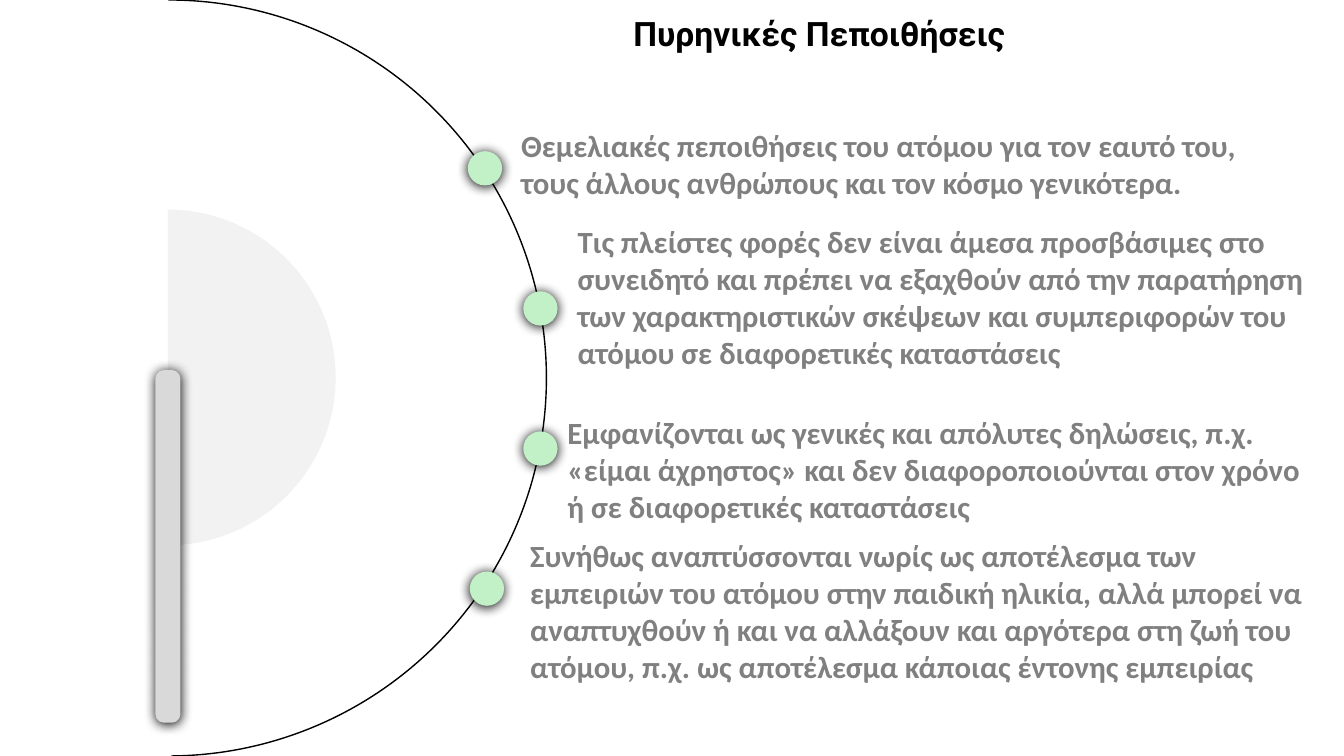
import pptx
import pptx.util
import pptx.dml.color
import pptx.enum.shapes
import pptx.enum.text
from lxml import etree
from pptx.oxml.ns import qn
from pptx.util import Inches
from dataclasses import dataclass


@dataclass(frozen=True)
class Theme:
    black: str = "000000"
    text: str = "808080"
    dot: str = "C2F1C8"
    half_disc: str = "F2F2F2"
    bar: str = "D9D9D9"
    title_size: int = 24
    body_size: int = 22
    title_font: str = "Roboto"
    body_font: str = "Calibri"


theme = Theme()
rgb = pptx.dml.color.RGBColor.from_string
shape_types = pptx.enum.shapes.MSO_SHAPE


def write_text(shape, text, font, size, color, align):
    frame = shape.text_frame
    frame.word_wrap = True
    frame.auto_size = pptx.enum.text.MSO_AUTO_SIZE.NONE
    frame.vertical_anchor = pptx.enum.text.MSO_ANCHOR.TOP
    paragraph = frame.paragraphs[0]
    paragraph.alignment = align
    paragraph.line_spacing = 1.0
    paragraph.space_before = pptx.util.Pt(0)
    run = paragraph.add_run()
    run.text = text
    run.font.name = font
    run.font.size = pptx.util.Pt(size)
    run.font.bold = True
    run.font.color.rgb = rgb(color)


def add_shape(kind, left, top, width, height, fill=None, line=None, shadow=False):
    shape = slide.shapes.add_shape(
        kind, Inches(left), Inches(top), Inches(width), Inches(height))
    shape.shadow.inherit = False
    if fill:
        shape.fill.solid()
        shape.fill.fore_color.rgb = rgb(fill)
    else:
        shape.fill.background()
    if line:
        shape.line.color.rgb = rgb(line)
        shape.line.width = pptx.util.Pt(1)
    else:
        shape.line.fill.background()
    if shadow:
        effects = shape._element.spPr.find(qn("a:effectLst"))
        outer = etree.SubElement(
            effects, qn("a:outerShdw"), blurRad=str(pptx.util.Pt(8.5)),
            dist=str(pptx.util.Pt(1)), dir="5400000", rotWithShape="0")
        etree.SubElement(outer, qn("a:srgbClr"), val=theme.black)
    return shape


presentation = pptx.Presentation()
presentation.slide_width = Inches(13.33)
presentation.slide_height = Inches(7.5)
slide = presentation.slides.add_slide(presentation.slide_layouts[5])

# Large outlined arc, from the top round to the bottom
outline = add_shape(shape_types.ARC, -2.08, 0, 7.5, 7.5, line=theme.black)
outline.adjustments[0] = 162
outline.adjustments[1] = 53.71

# Statements: left, top, width, height, left of the dot, text
statements = [
    (5.07, 1.21, 7.92, 0.84, 4.64,
     "Θεμελιακές πεποιθήσεις του ατόμου για τον εαυτό του, τους άλλους "
     "ανθρώπους και τον κόσμο γενικότερα."),
    (5.63, 2.16, 7.7, 1.95, 5.19,
     "Τις πλείστες φορές δεν είναι άμεσα προσβάσιμες στο συνειδητό και πρέπει "
     "να εξαχθούν από την παρατήρηση των χαρακτηριστικών σκέψεων και "
     "συμπεριφορών του ατόμου σε διαφορετικές καταστάσεις"),
    (5.53, 4.06, 7.56, 1.21, 5.19,
     "Εμφανίζονται ως γενικές και απόλυτες δηλώσεις, π.χ. «είμαι άχρηστος» και "
     "δεν διαφοροποιούνται στον χρόνο ή σε διαφορετικές καταστάσεις"),
    (5.16, 5.28, 7.86, 1.95, 4.66,
     "Συνήθως αναπτύσσονται νωρίς ως αποτέλεσμα των εμπειριών του ατόμου στην "
     "παιδική ηλικία, αλλά μπορεί να αναπτυχθούν ή και να αλλάξουν και αργότερα "
     "στη ζωή του ατόμου, π.χ. ως αποτέλεσμα κάποιας έντονης εμπειρίας"),
]
dot_top, dot_step, dot_size = 1.5, 1.39, 0.34
for index, (left, top, width, height, dot_left, text) in enumerate(statements):
    box = slide.shapes.add_textbox(
        Inches(left), Inches(top), Inches(width), Inches(height))
    write_text(box, text, font=theme.body_font, size=theme.body_size,
               color=theme.text, align=pptx.enum.text.PP_ALIGN.LEFT)
    add_shape(shape_types.OVAL, dot_left, dot_top + index * dot_step,
              dot_size, dot_size, fill=theme.dot, shadow=True)

# Half disc and upright bar
half_disc = add_shape(shape_types.ARC, 0, 2.08, 3.33, 3.33, fill=theme.half_disc)
half_disc.adjustments[0] = 162
half_disc.adjustments[1] = 53.6
bar = add_shape(shape_types.ROUNDED_RECTANGLE, 1.54, 3.67, 0.25, 3.5,
                fill=theme.bar, shadow=True)
bar.adjustments[0] = 0.35
bar.rotation = 180

# Title
title = slide.shapes.title
title.left, title.top = Inches(3.93), Inches(0.08)
title.width, title.height = Inches(8.39), Inches(0.5)
write_text(title, "Πυρηνικές Πεποιθήσεις", font=theme.title_font,
           size=theme.title_size, color=theme.black,
           align=pptx.enum.text.PP_ALIGN.CENTER)

presentation.save("out.pptx")
